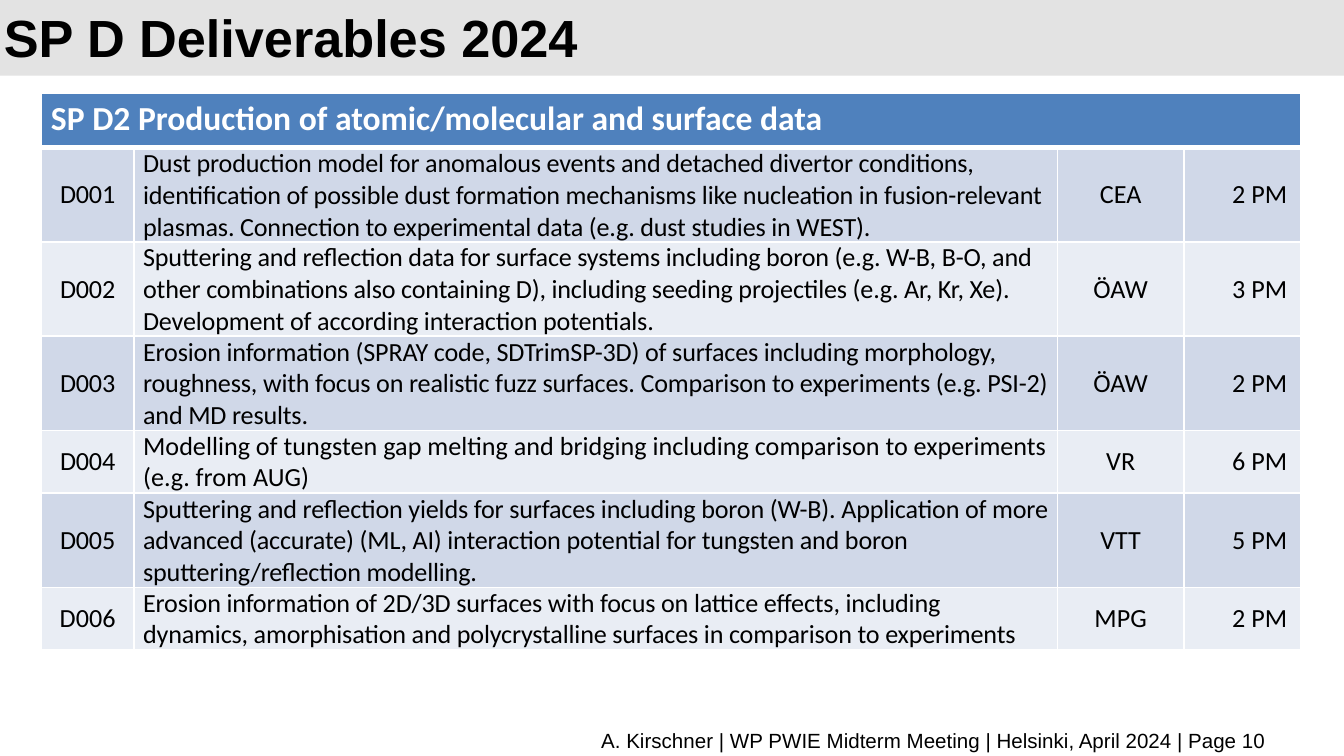
from lxml import etree
from pptx import Presentation
from pptx.dml.color import RGBColor
from pptx.enum import shapes, text
from pptx.oxml.ns import qn
from pptx.util import Pt

THEME = {
    "band": "E3E3E3", "head": "4F81BD", "odd": "D0D8E8", "even": "E9EDF4",
    "ink": "000000", "white": "FFFFFF",
    "title": 28, "topic": 18, "body": 14, "foot": 11,
}
LEFT, MID, RIGHT = text.PP_ALIGN.LEFT, text.PP_ALIGN.CENTER, text.PP_ALIGN.RIGHT
TOP, CORE = text.MSO_ANCHOR.TOP, text.MSO_ANCHOR.MIDDLE


def write(frame, words, size, face, color="ink", bold=False, tight=False, **form):
    para = frame.paragraphs[0]
    run = para.add_run()
    run.text = words
    for key, value in form.items():
        setattr(para, key, value)
    font = {"size": Pt(THEME[size]), "name": face, "bold": bold}
    for key, value in font.items():
        setattr(run.font, key, value)
    run.font.color.rgb = RGBColor.from_string(THEME[color])
    if tight:
        run.font._element.set("spc", "-10")


def dress(cell, fill, base=1):
    props = cell._tc.get_or_add_tcPr()
    for side, width in {"L": 1, "R": 1, "T": 1, "B": base}.items():
        line = etree.SubElement(props, qn(f"a:ln{side}"), w=str(Pt(width)))
        paint = etree.SubElement(line, qn("a:solidFill"))
        etree.SubElement(paint, qn("a:srgbClr"), val=THEME["white"])
    cell.fill.solid()
    cell.fill.fore_color.rgb = RGBColor.from_string(THEME[fill])


deck = Presentation()
deck.slide_width, deck.slide_height = Pt(720), Pt(405)
slide = deck.slides.add_slide(deck.slide_layouts[6])

band = slide.shapes.add_shape(shapes.MSO_SHAPE.RECTANGLE, 0, 0, Pt(720), Pt(40.5))
band.shadow.inherit = False
band.fill.solid()
band.fill.fore_color.rgb = RGBColor.from_string(THEME["band"])
band.line.fill.background()

title = slide.shapes.add_textbox(Pt(-5), Pt(6.5), Pt(594), Pt(27.4)).text_frame
title.word_wrap = True
title.vertical_anchor = CORE
write(title, "SP D Deliverables 2024", "title", "Arial", bold=True, line_spacing=Pt(32))

foot = slide.shapes.add_textbox(Pt(36.7), Pt(386.6), Pt(684.7), Pt(15.8))
foot.width = Pt(684.7)
foot.text_frame.word_wrap = True
foot.width = Pt(648 + 36.7)
foot.left = Pt(36.7)
foot.width = Pt(648.7)
write(foot.text_frame,
      "A. Kirschner | WP PWIE Midterm Meeting | Helsinki, April 2024 | Page 10",
      "foot", "Arial", alignment=RIGHT)

TASKS = [
    ("D001", "Dust production model for anomalous events and detached divertor conditions, "
     "identification of possible dust formation mechanisms like nucleation in fusion-relevant "
     "plasmas. Connection to experimental data (e.g. dust studies in WEST).", "CEA", "2 PM"),
    ("D002", "Sputtering and reflection data for surface systems including boron (e.g. W-B, B-O, "
     "and other combinations also containing D), including seeding projectiles (e.g. Ar, Kr, Xe). "
     "Development of according interaction potentials.", "ÖAW", "3 PM"),
    ("D003", "Erosion information (SPRAY code, SDTrimSP-3D) of surfaces including morphology, "
     "roughness, with focus on realistic fuzz surfaces. Comparison to experiments (e.g. PSI-2) "
     "and MD results.", "ÖAW", "2 PM"),
    ("D004", "Modelling of tungsten gap melting and bridging including comparison to "
     "experiments (e.g. from AUG)", "VR", "6 PM"),
    ("D005", "Sputtering and reflection yields for surfaces including boron (W-B). Application of "
     "more advanced (accurate) (ML, AI) interaction potential for tungsten and boron "
     "sputtering/reflection modelling.", "VTT", "5 PM"),
    ("D006", "Erosion information of 2D/3D surfaces with focus on lattice effects, including "
     "dynamics, amorphisation and polycrystalline surfaces in comparison to experiments",
     "MPG", "2 PM"),
]
LOOSE = {("D004", 1), ("D006", 0)}
SLIM = {"margin_left": Pt(5), "margin_right": Pt(5), "margin_top": 0, "margin_bottom": 0}

holder = slide.shapes.add_table(len(TASKS) + 1, 4, Pt(22.3), Pt(49.7), Pt(674.6), Pt(298))
grid = holder.table
for col, width in zip(grid.columns, (49.4, 494.8, 67.8, 62.6)):
    col.width = Pt(width)
for row in grid.rows:
    row.height = Pt(29.5)
holder.height = Pt(298)

head = grid.cell(0, 0)
head.merge(grid.cell(0, 3))
for cell in grid.rows[0].cells:
    dress(cell, "head", 3)
for key, value in {**SLIM, "vertical_anchor": TOP}.items():
    setattr(head, key, value)
write(head.text_frame, "SP D2 Production of atomic/molecular and surface data", "topic",
      "Calibri", "white", bold=True, line_spacing=1.15)

for r, task in enumerate(TASKS, 1):
    for c, (words, side) in enumerate(zip(task, (MID, LEFT, MID, RIGHT))):
        cell = grid.cell(r, c)
        dress(cell, "odd" if r % 2 else "even")
        slim = c < 2 and (task[0], c) != ("D006", 0)
        for key, value in {**(SLIM if slim else {}), "vertical_anchor": CORE}.items():
            setattr(cell, key, value)
        write(cell.text_frame, words, "body", "Calibri", alignment=side,
              tight=c < 2 and (task[0], c) not in LOOSE)

deck.save("out.pptx")
